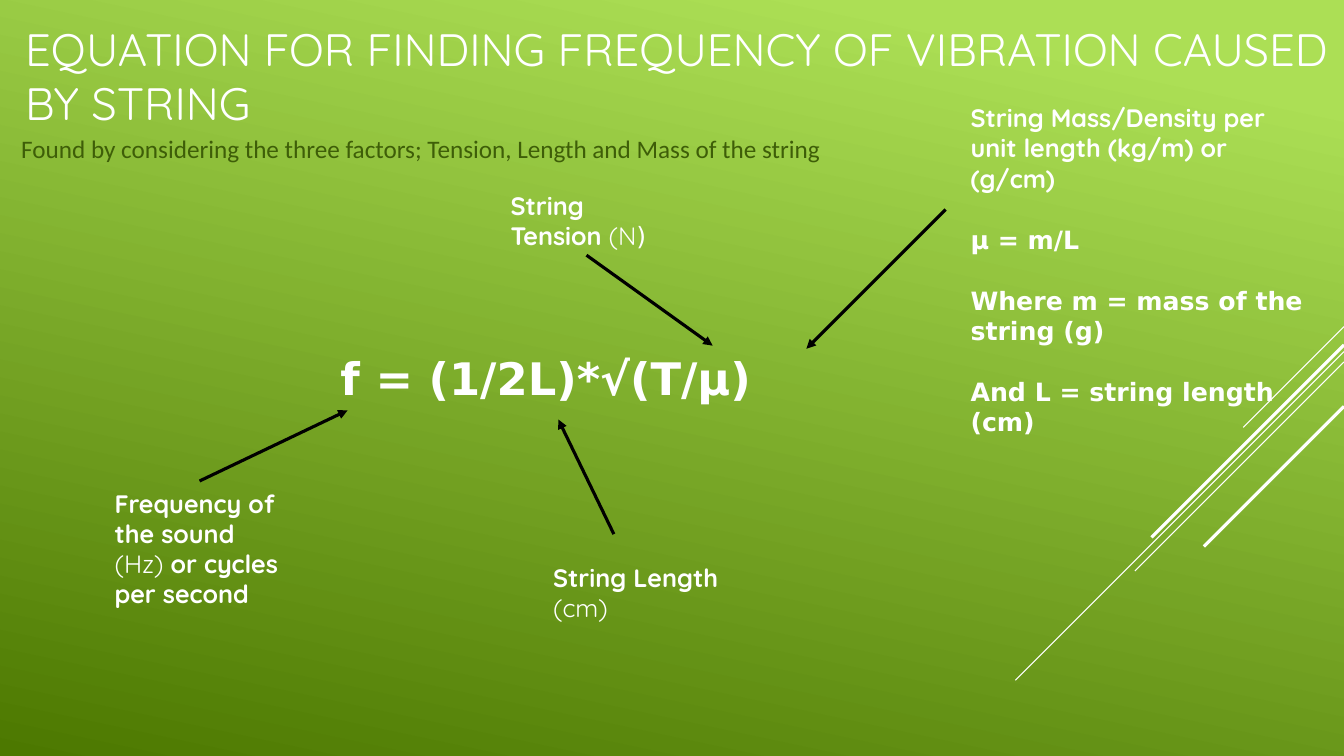
from lxml import etree
from pptx import Presentation
from pptx.dml.color import RGBColor
from pptx.enum.shapes import MSO_CONNECTOR
from pptx.enum.text import MSO_ANCHOR, MSO_AUTO_SIZE, PP_ALIGN
from pptx.oxml.ns import qn
from pptx.util import Cm, Pt

WHITE = RGBColor(0xFF, 0xFF, 0xFF)
BLACK = RGBColor(0x00, 0x00, 0x00)
LIME = RGBColor(0xAC, 0xDF, 0x55)
MOSS = RGBColor(0x4C, 0x78, 0x00)
OLIVE = RGBColor(0x3E, 0x5E, 0x08)
QUICK, DEJA, CALI = "Quicksand", "DejaVu Sans", "Calibri"
STRAIGHT = MSO_CONNECTOR.STRAIGHT
MIDDLE = MSO_ANCHOR.MIDDLE
FIXED = MSO_AUTO_SIZE.NONE
LEFT = PP_ALIGN.LEFT
WIDE, HIGH = 33.87, 19.05


def add_run(para, text, font, size, color, bold=False):
    run = para.add_run()
    run.text = text
    run.font.name = font
    run.font.size = Pt(size)
    run.font.bold = bold
    run.font.color.rgb = color


def add_line(ends, color, width):
    line = slide.shapes.add_connector(STRAIGHT, *[Cm(v) for v in ends])
    line.line.color.rgb = color
    line.line.width = Pt(width)
    etree.SubElement(line._element.spPr, qn("a:effectLst"))
    return line


deck = Presentation()
deck.slide_width, deck.slide_height = Cm(WIDE), Cm(HIGH)
slide = deck.slides.add_slide(deck.slide_layouts[1])

fill = slide.background.fill
fill.gradient()
fill.gradient_angle = 258
for stop, place, color in zip(fill.gradient_stops, (0.1, 1), (LIME, MOSS)):
    stop.position = place
    stop.color.rgb = color

for top, reach, width in [
    (8.23, 2.54, 0.75),
    (8.86, 8.28, 0.75),
    (9.12, 5.27, 0.75),
    (8.69, 4.85, 2.25),
    (10.24, 3.53, 2.25),
]:
    add_line((WIDE, top, WIDE - reach, top + reach), WHITE, width)

title, body = slide.shapes.title, slide.placeholders[1]
for holder, spot, text, font, size, color in [
    (title, (0.38, 0.41, 33.87, 2.97),
     "EQUATION FOR FINDING FREQUENCY OF VIBRATION CAUSED BY STRING",
     QUICK, 32.4, WHITE),
    (body, (0.28, 2.11, 33.3, 3.25),
     "Found by considering the three factors; Tension, Length and Mass of the string",
     CALI, 18, OLIVE),
]:
    holder.left, holder.top, holder.width, holder.height = [Cm(v) for v in spot]
    frame = holder.text_frame
    frame.auto_size = FIXED
    frame.vertical_anchor = MIDDLE
    para = frame.paragraphs[0]
    para.alignment = LEFT
    add_run(para, text, font, size, color)

para = body.text_frame.paragraphs[0]
para.space_after = Pt(6)
props = para._p.get_or_add_pPr()
props.set("marL", "0")
props.set("indent", "0")
etree.SubElement(props, qn("a:buNone"))

labels = [
    ((8.33, 8.71, 17.22, 1.63), 32, [[("f = (1/2L)*√(T/μ)", DEJA, True)]]),
    ((13.69, 14.05, 4.8, 1.8), 18,
     [[("String Length ", QUICK, True), ("(cm)", QUICK, False)]]),
    ((12.62, 4.67, 4.8, 1.8), 18,
     [[("String Tension ", QUICK, True), ("(N", QUICK, False), (")", DEJA, False)]]),
    ((24.21, 2.46, 8.99, 7.95), 18,
     [[("String Mass/Density per unit length (kg/m) or (g/cm)", QUICK, True)],
      [("μ = m/L", DEJA, True)],
      [("Where m = mass of the string (g)", DEJA, True)],
      [("And L = string length (cm)", DEJA, True)]]),
    ((2.64, 12.17, 4.8, 3.33), 18,
     [[("Frequency of the sound ", QUICK, True), ("(Hz) ", QUICK, False),
       ("or cycles per second", QUICK, True)]]),
]
for spot, size, paras in labels:
    frame = slide.shapes.add_textbox(*[Cm(v) for v in spot]).text_frame
    frame.word_wrap = True
    for i, runs in enumerate(paras):
        para = frame.add_paragraph() if i else frame.paragraphs[0]
        para.space_before = Pt(22 if i else 0)
        for text, font, bold in runs:
            add_run(para, text, font, size, WHITE, bold)

for ends in [
    (15.47, 13.46, 14.07, 10.57),
    (23.83, 5.28, 20.32, 8.79),
    (14.78, 6.43, 17.96, 8.71),
    (5.03, 12.12, 8.76, 10.34),
]:
    arrow = add_line(ends, BLACK, 2.25)
    etree.SubElement(arrow.line._get_or_add_ln(), qn("a:tailEnd"), type="triangle")

deck.save("out.pptx")
